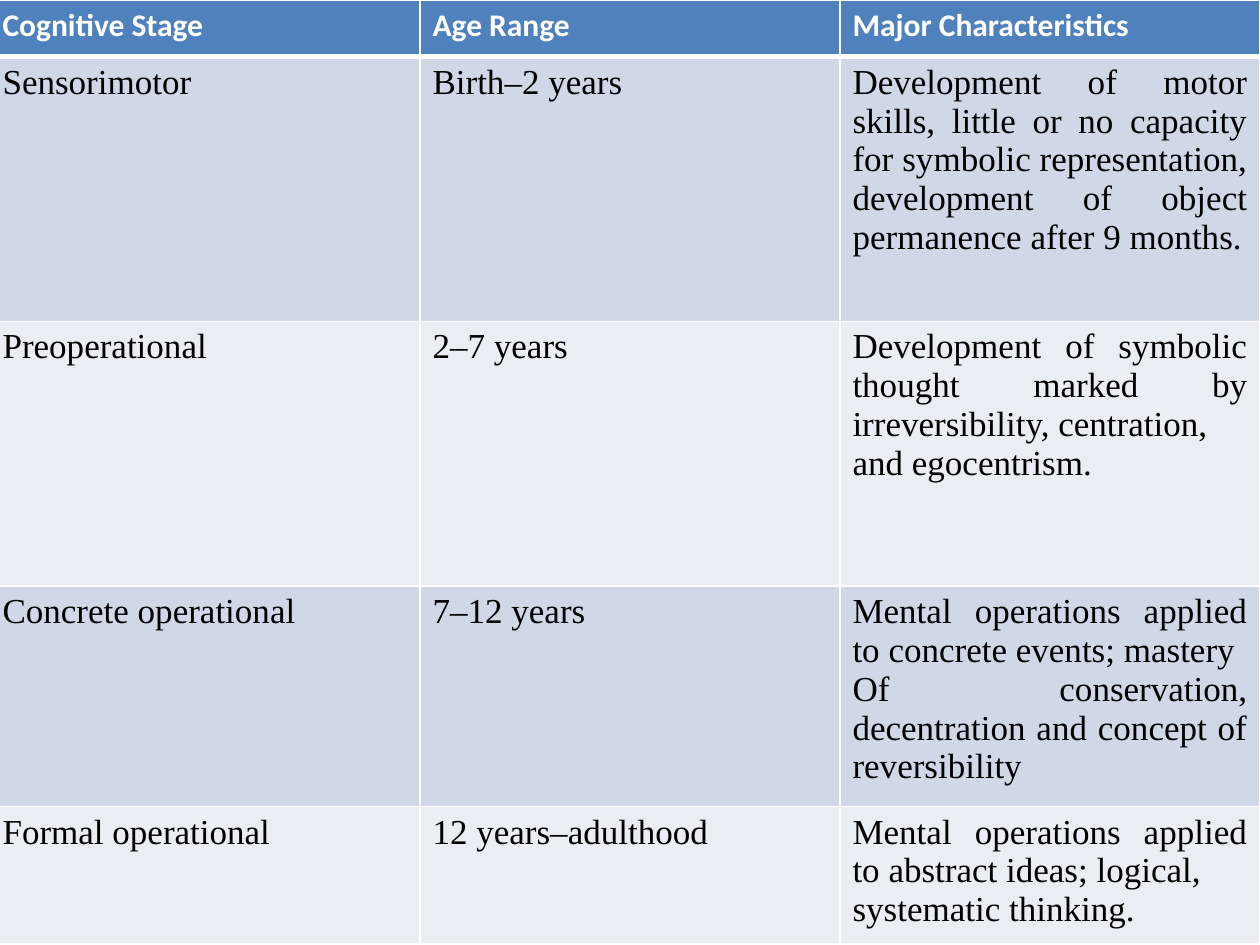
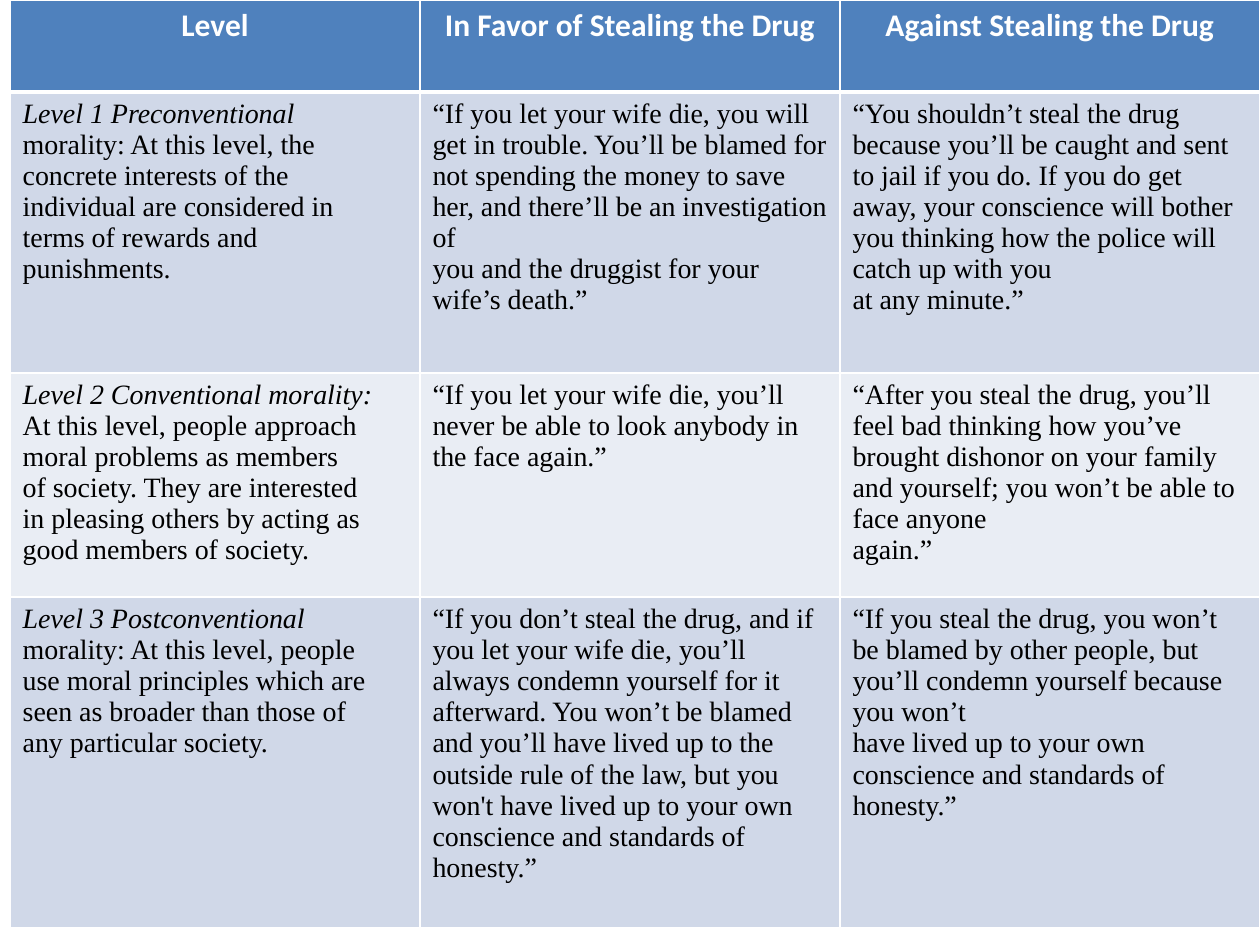
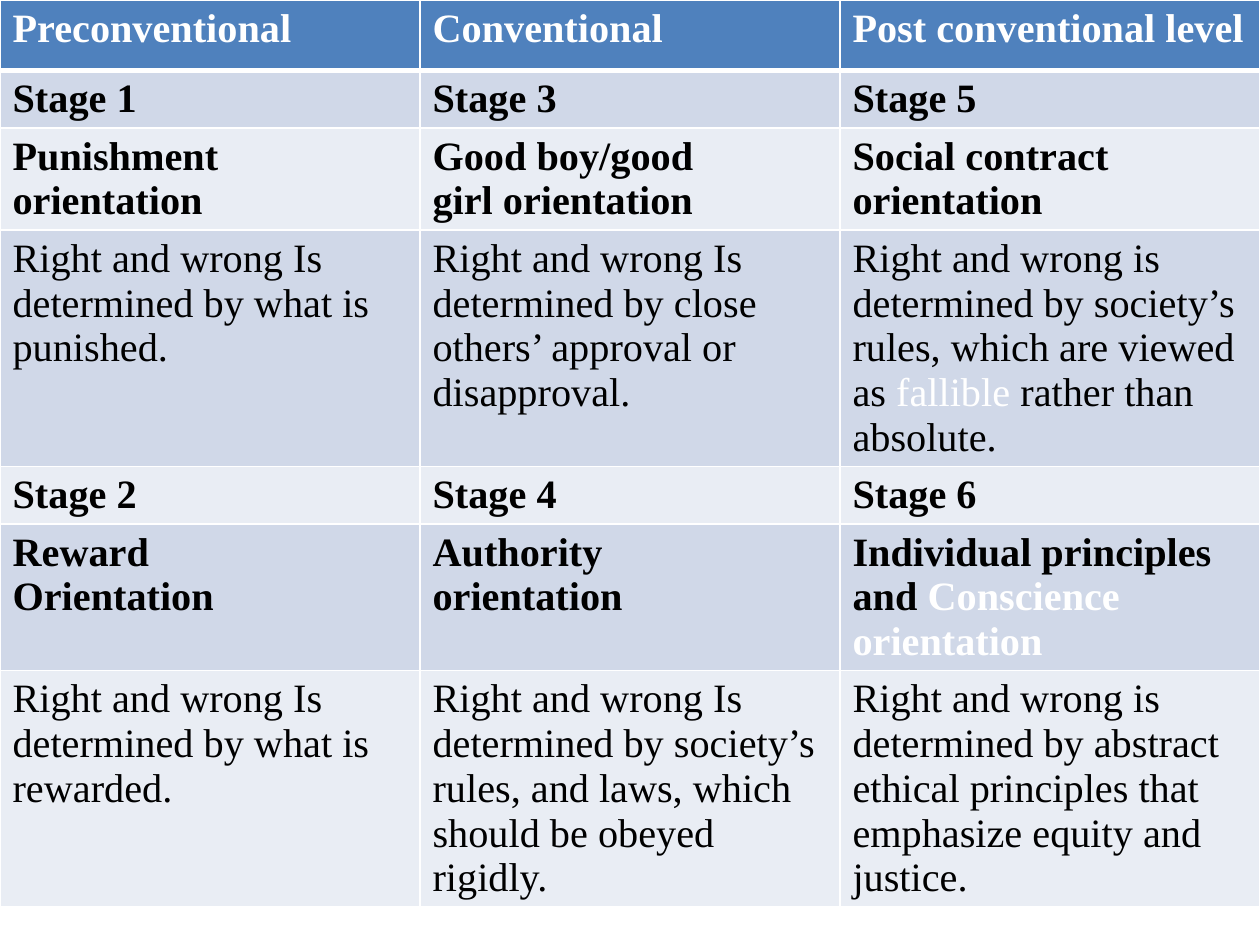
from lxml import etree
from pptx import Presentation
from pptx.dml.color import RGBColor
from pptx.enum import text
from pptx.oxml import ns
from pptx.util import Inches, Pt

# Content: a line break starts a paragraph, asterisks enclose accented words
PIAGET_STAGES = [
    ("Cognitive Stage", "Age Range", "Major Characteristics"),
    ("Sensorimotor", "Birth–2 years",
     "Development of motor skills, little or no capacity for symbolic "
     "representation, development of object permanence after 9 months."),
    ("Preoperational", "2–7 years",
     "Development of symbolic thought marked by irreversibility, centration,\n"
     "and egocentrism."),
    ("Concrete operational", "7–12 years",
     "Mental operations applied to concrete events; mastery\n"
     "Of conservation, decentration and concept of reversibility"),
    ("Formal operational", "12 years–adulthood",
     "Mental operations applied to abstract ideas; logical,\n"
     "systematic thinking."),
]

DRUG_DILEMMA = [
    ("Level", "In Favor of Stealing the Drug", "Against Stealing the Drug"),
    ("*Level 1 Preconventional*\nmorality: At this level, the\n"
     "concrete interests of the\nindividual are considered in\n"
     "terms of rewards and\npunishments.",
     "“If you let your wife die, you will get in trouble. You’ll be blamed "
     "for not spending the money to save her, and there’ll be an "
     "investigation of\nyou and the druggist for your wife’s death.”",
     "“You shouldn’t steal the drug because you’ll be caught and sent to "
     "jail if you do. If you do get away, your conscience will bother you "
     "thinking how the police will catch up with you\nat any minute.”"),
    ("*Level 2 Conventional morality:*\nAt this level, people approach\n"
     "moral problems as members\nof society. They are interested\n"
     "in pleasing others by acting as\ngood members of society.",
     "“If you let your wife die, you’ll never be able to look anybody in "
     "the face again.”",
     "“After you steal the drug, you’ll feel bad thinking how you’ve "
     "brought dishonor on your family and yourself; you won’t be able to "
     "face anyone\nagain.”"),
    ("*Level 3 Postconventional*\nmorality: At this level, people\n"
     "use moral principles which are\nseen as broader than those of\n"
     "any particular society.",
     "“If you don’t steal the drug, and if you let your wife die, you’ll "
     "always condemn yourself for it afterward. You won’t be blamed and "
     "you’ll have lived up to the outside rule of the law, but you won't "
     "have lived up to your own conscience and standards of honesty.”",
     "“If you steal the drug, you won’t be blamed by other people, but "
     "you’ll condemn yourself because you won’t\nhave lived up to your own "
     "conscience and standards of honesty.”"),
]

MORAL_STAGES = [
    ("Preconventional", "Conventional", "Post conventional level"),
    ("Stage 1", "Stage 3", "Stage 5"),
    ("Punishment\norientation", "Good boy/good\ngirl orientation",
     "Social contract\norientation"),
    ("Right and wrong Is determined by what is\npunished.",
     "Right and wrong Is determined by close others’ approval or "
     "disapproval.",
     "Right and wrong is determined by society’s rules, which are viewed "
     "as *fallible* rather than absolute."),
    ("Stage 2", "Stage 4", "Stage 6"),
    ("Reward\nOrientation", "Authority\norientation",
     "Individual principles and *Conscience orientation*"),
    ("Right and wrong Is determined by what is rewarded.",
     "Right and wrong Is determined by society’s rules, and laws, which "
     "should be obeyed rigidly.",
     "Right and wrong is determined by abstract ethical principles that "
     "emphasize equity and justice."),
]

# Shared look
COLORS = {"header": "4F81BD", "odd": "D0D8E8", "even": "E9EDF4",
          "light": "FFFFFF", "dark": "000000"}
WIDTH, HEIGHT = 10, 7.5
THIN, THICK = 1, 3
HEADER = {"name": "Calibri", "size": Pt(18), "bold": True, "color": "light"}
BODY = {"name": "Times New Roman", "bold": False, "color": "dark"}
ALIGN = text.PP_ALIGN

# One entry per slide: the accent overrides the format of the marked words
TABLES = [
    {"rows": PIAGET_STAGES, "left": -0.08,
     "heights": [0.45, 2.1, 2.1, 1.75, 1.09],
     "header": HEADER, "body": BODY | {"size": Pt(20)}, "accent": {},
     "justified": {2}},
    {"rows": DRUG_DILEMMA, "left": 0.08,
     "heights": [0.73, 2.23, 1.78, 2.62],
     "header": HEADER, "body": BODY | {"size": Pt(16)},
     "accent": {"italic": True}, "header_align": ALIGN.CENTER},
    {"rows": MORAL_STAGES, "left": 0,
     "heights": [0.56, 0.42, 0.73, 1.24, 0.42, 0.73, 1.59],
     "header": HEADER | {"name": "Times New Roman", "size": Pt(23)},
     "body": BODY | {"size": Pt(23)}, "accent": {"color": "light"},
     "bold_rows": {1, 2, 4, 5}},
]


def set_font(font, style):
    for key, value in style.items():
        if key == "color":
            font.color.rgb = RGBColor.from_string(COLORS[value])
        else:
            setattr(font, key, value)


def write_cell(cell, content, style, accent, align):
    for index, line in enumerate(content.split("\n")):
        frame = cell.text_frame
        para = frame.add_paragraph() if index else frame.paragraphs[0]
        para.alignment = align
        for position, words in enumerate(line.split("*")):
            if words:
                span = para.add_run()
                span.text = words
                set_font(span.font, style | accent if position % 2 else style)


def add_borders(cell, row):
    properties = cell._tc.get_or_add_tcPr()
    widths = {"lnL": THIN, "lnR": THIN, "lnT": THICK if row == 1 else THIN,
              "lnB": THICK if row == 0 else THIN}
    for side, width in widths.items():
        line = etree.SubElement(properties, ns.qn(f"a:{side}"), w=str(Pt(width)))
        fill = etree.SubElement(line, ns.qn("a:solidFill"))
        etree.SubElement(fill, ns.qn("a:srgbClr"), val=COLORS["light"])


def add_table_page(deck, plan):
    page = deck.slides.add_slide(deck.slide_layouts[6])
    rows, left, heights = plan["rows"], plan["left"], plan["heights"]
    columns = len(rows[0])
    table = page.shapes.add_table(
        len(rows), columns, Inches(left), 0,
        Inches(WIDTH - left), Inches(sum(heights))).table

    # Column edges fall on thirds of the slide; the first absorbs the offset
    for column in range(columns):
        offset = 0 if column else left
        table.columns[column].width = Inches(WIDTH / columns - offset)

    for row, (contents, height) in enumerate(zip(rows, heights)):
        table.rows[row].height = Inches(height)
        band = "header" if row == 0 else "odd" if row % 2 else "even"
        style = plan["body"] if row else plan["header"]
        if row in plan.get("bold_rows", ()):
            style = style | {"bold": True}
        for column, content in enumerate(contents):
            cell = table.cell(row, column)
            align = ALIGN.LEFT if row else plan.get("header_align", ALIGN.LEFT)
            if row and column in plan.get("justified", ()):
                align = ALIGN.JUSTIFY
            add_borders(cell, row)
            cell.fill.solid()
            cell.fill.fore_color.rgb = RGBColor.from_string(COLORS[band])
            write_cell(cell, content, style, plan["accent"], align)


def main():
    deck = Presentation()
    deck.slide_width, deck.slide_height = Inches(WIDTH), Inches(HEIGHT)
    for plan in TABLES:
        add_table_page(deck, plan)
    deck.save("out.pptx")


if __name__ == "__main__":
    main()
